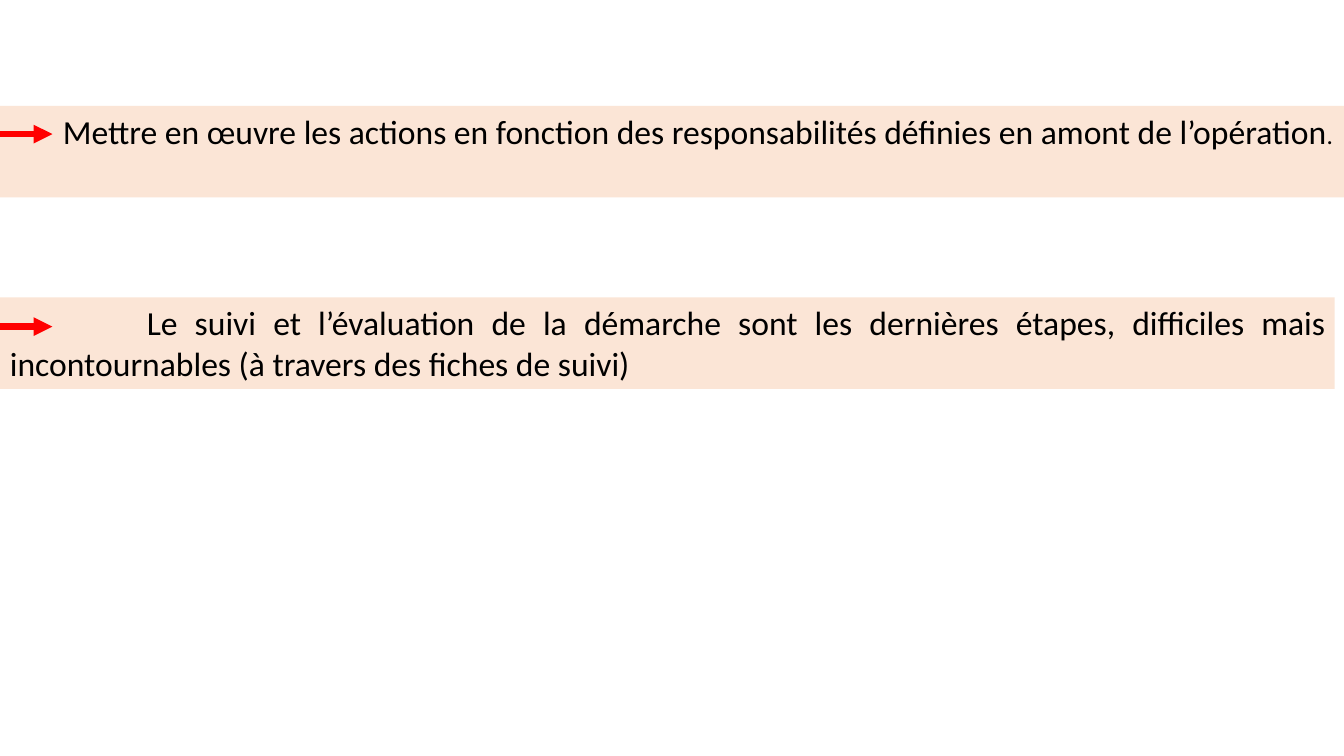
from lxml.etree import SubElement
from pptx import Presentation
from pptx.dml.color import RGBColor
from pptx.enum.shapes import MSO_CONNECTOR
from pptx.enum.text import MSO_ANCHOR, PP_ALIGN
from pptx.oxml.ns import qn
from pptx.util import Pt

COLORS = {"band": "FBE5D6", "arrow": "FF0000", "text": "000000"}
FONT = "Calibri"
BAND_HEIGHT = 65.4
ARROW_LENGTH = 37.5

# Top, width, first-line indent, arrow height, runs as (text, size)
STEPS = [
    (75.6, 960, 37.8, 95.8, [
        ("Mettre en œuvre les actions en fonction des responsabilités "
         "définies en amont de l’opération", 24),
        (".", 18),
    ]),
    (212.4, 953.3, 97.8, 233.3, [
        ("Le suivi et l’évaluation de la démarche sont les dernières étapes, "
         "difficiles mais incontournables (à travers des fiches de suivi)", 24),
    ]),
]


def color(name):
    return RGBColor.from_string(COLORS[name])


def add_band(slide, top, width, indent, runs):
    band = slide.shapes.add_textbox(Pt(0), Pt(top), Pt(width), Pt(BAND_HEIGHT))
    band.fill.solid()
    band.fill.fore_color.rgb = color("band")
    frame = band.text_frame
    frame.word_wrap = True
    frame.vertical_anchor = MSO_ANCHOR.TOP
    frame.margin_right = Pt(6)
    paragraph = frame.paragraphs[0]
    paragraph.alignment = PP_ALIGN.JUSTIFY
    properties = paragraph._p.get_or_add_pPr()
    properties.set("marL", "0")
    properties.set("indent", str(Pt(indent)))
    for text, size in runs:
        run = paragraph.add_run()
        run.text = text
        run.font.name = FONT
        run.font.size = Pt(size)
        run.font.color.rgb = color("text")


def add_arrow(slide, y):
    arrow = slide.shapes.add_connector(
        MSO_CONNECTOR.STRAIGHT, Pt(0), Pt(y), Pt(ARROW_LENGTH), Pt(y))
    arrow.line.color.rgb = color("arrow")
    arrow.line.width = Pt(4.5)
    SubElement(arrow.line._get_or_add_ln(), qn("a:tailEnd"), type="triangle")
    SubElement(arrow._element.spPr, qn("a:effectLst"))


def main():
    presentation = Presentation()
    presentation.slide_width = Pt(960)
    presentation.slide_height = Pt(540)
    slide = presentation.slides.add_slide(presentation.slide_layouts[6])
    for top, width, indent, arrow_y, runs in STEPS:
        add_band(slide, top, width, indent, runs)
        add_arrow(slide, arrow_y)
    presentation.save("out.pptx")


if __name__ == "__main__":
    main()
